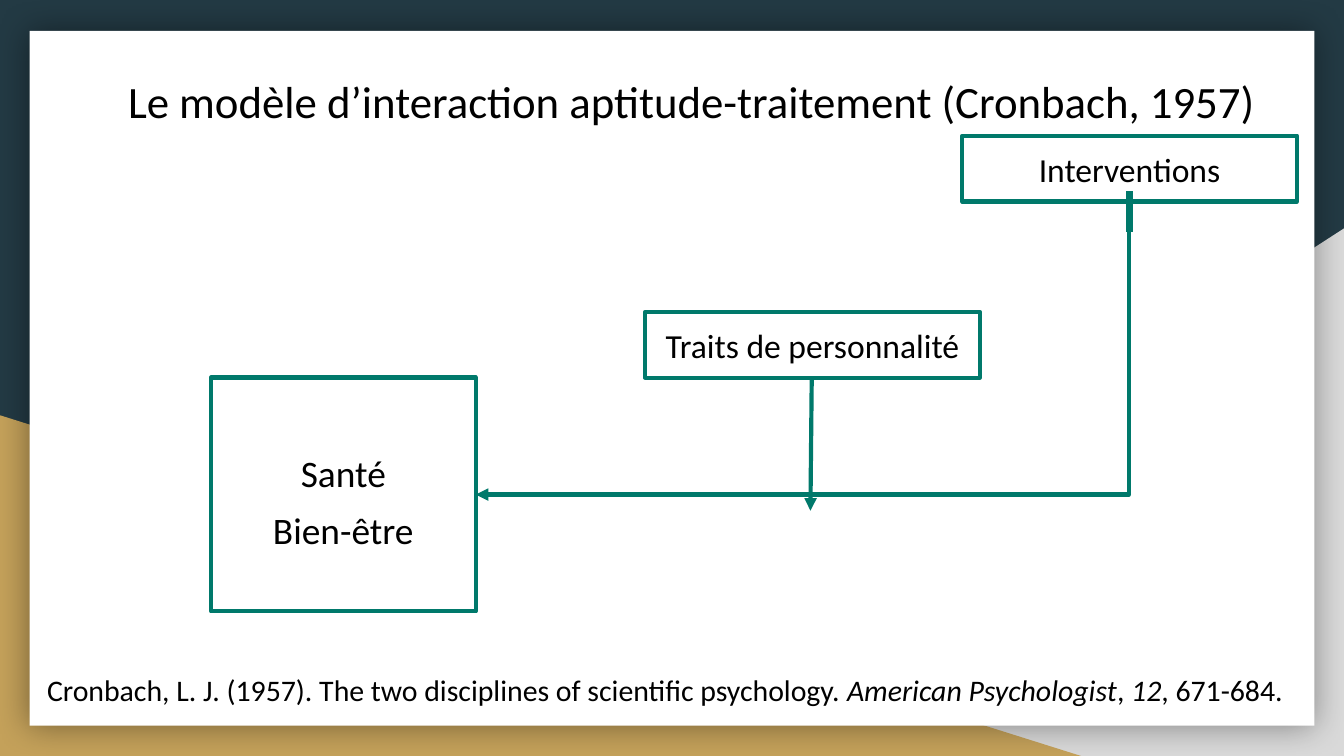
from lxml import etree
from pptx import Presentation, util as u
from pptx.dml.color import RGBColor
from pptx.enum import shapes, text
from pptx.oxml import ns

FONT = "Calibri"
GREEN, WHITE, BLACK = "00796B", "FFFFFF", "000000"


def rgb(value):
    return RGBColor.from_string(value)


def place(shape, box):
    shape.left, shape.top, shape.width, shape.height = map(u.Inches, box)


def add_xml(parent, tag, **attributes):
    return etree.SubElement(parent, ns.qn(tag), attributes)


def highlight(run, colour):
    """Mark a run; the schema wants the mark right after the text fill."""
    properties = run.font._element
    mark = add_xml(properties, "a:highlight")
    add_xml(mark, "a:srgbClr", val=colour)
    properties.find(ns.qn("a:solidFill")).addnext(mark)


def write(shape, paragraphs, size=18, align="CENTER", anchor="TOP", spacing=1):
    """Fill a shape with paragraphs, each a list of (words, italic) runs."""
    frame = shape.text_frame
    frame.word_wrap = True
    frame.auto_size = text.MSO_AUTO_SIZE.NONE
    frame.vertical_anchor = text.MSO_ANCHOR[anchor]
    frame.margin_left = frame.margin_right = u.Inches(0.1)
    frame.margin_top = frame.margin_bottom = u.Inches(0.1)
    for index, runs in enumerate(paragraphs):
        paragraph = frame.add_paragraph() if index else frame.paragraphs[0]
        paragraph.alignment = text.PP_ALIGN[align]
        paragraph.line_spacing = spacing
        paragraph.space_before = u.Pt(0)
        for words, italic in runs:
            run = paragraph.add_run()
            run.text = words
            run.font.name, run.font.size = FONT, u.Pt(size)
            run.font.italic = italic
            run.font.color.rgb = rgb(BLACK)


class ModelSlide:
    line_width = u.Pt(2.25)

    def __init__(self, deck, background):
        self.slide = deck.slides.add_slide(deck.slide_layouts.get_by_name("Two Content"))
        self.shapes = self.slide.shapes
        fill = self.slide.background.fill
        fill.solid()
        fill.fore_color.rgb = rgb(background)

    def panel(self, kind, box, fill, flip=False):
        panel = self.shapes.add_shape(shapes.MSO_SHAPE[kind], *map(u.Inches, box))
        panel.shadow.inherit = False
        panel.fill.solid()
        panel.fill.fore_color.rgb = rgb(fill)
        panel.line.fill.background()
        if flip:
            panel._element.spPr.xfrm.set("flipH", "1")
        return panel

    def card(self, box):
        """White sheet with a soft glow of shadow around it."""
        sheet = self.panel("RECTANGLE", box, WHITE)
        effects = sheet._element.spPr.find(ns.qn("a:effectLst"))
        shadow = add_xml(effects, "a:outerShdw", blurRad=str(u.Pt(18)), dist="0",
                         dir="0", algn="ctr", rotWithShape="0")
        colour = add_xml(shadow, "a:srgbClr", val=BLACK)
        add_xml(colour, "a:alpha", val="40000")

    def placeholder(self, index, box, paragraphs, **style):
        holder = self.slide.placeholders[index]
        place(holder, box)
        self.shapes._spTree.append(holder._element)  # above the panels
        write(holder, paragraphs, **style)
        for paragraph in holder.text_frame.paragraphs:
            properties = paragraph._p.get_or_add_pPr()
            properties.set("marL", "0")
            properties.set("indent", "0")
            add_xml(properties, "a:buNone")
        return holder

    def outline(self, shape):
        shape.line.color.rgb = rgb(GREEN)
        shape.line.width = self.line_width

    def concept(self, box, paragraphs, **style):
        concept = self.panel("RECTANGLE", box, WHITE)
        self.outline(concept)
        write(concept, paragraphs, **style)

    def arrow(self, start, end):
        arrow = self.shapes.add_connector(
            shapes.MSO_CONNECTOR.STRAIGHT, *map(u.Inches, start + end))
        self.outline(arrow)
        add_xml(arrow.line._get_or_add_ln(), "a:tailEnd", type="triangle")
        add_xml(arrow._element.spPr, "a:effectLst")
        return arrow

    def corner_arrow(self, start, end):
        """Arrow that runs down from start, then left to end."""
        run, drop = start[0] - end[0], end[1] - start[1]
        middle_x, middle_y = (start[0] + end[0]) / 2, (start[1] + end[1]) / 2
        # The frame is the unrotated one: a quarter turn swaps its sides.
        left, top = middle_x - drop / 2, middle_y - run / 2
        arrow = self.arrow((left, top), (left + drop, top + run))
        properties = arrow._element.spPr
        properties.xfrm.set("rot", "5400000")
        properties.find(ns.qn("a:prstGeom")).set("prst", "bentConnector2")


def main():
    deck = Presentation()
    deck.slide_width = u.Inches(10)
    deck.slide_height = deck.slide_width * 9 // 16
    model = ModelSlide(deck, "233A44")

    model.panel("RIGHT_TRIANGLE", (3.92, 1.7, 6.08, 3.93), "D9D9D9", flip=True)
    model.panel("RIGHT_TRIANGLE", (0, 3.09, 8.06, 2.54), "C4A15A")
    model.card((0.22, 0.23, 9.56, 5.17))

    model.placeholder(
        0, (0.65, 0.33, 8.99, 0.77),
        [[("Le modèle d’interaction aptitude-traitement (Cronbach, 1957)", False)]],
        size=24, spacing=1.29)
    interventions = model.placeholder(
        1, (7.16, 1.01, 2.49, 0.49), [[("Interventions", False)], [(" ", False)]])
    interventions.fill.solid()
    interventions.fill.fore_color.rgb = rgb(WHITE)
    model.outline(interventions)
    stem = interventions.text_frame.paragraphs[1].runs[0]
    stem.font.color.rgb = rgb(WHITE)
    highlight(stem, GREEN)

    citation = model.placeholder(
        2, (0.25, 4.86, 9.51, 0.49),
        [[("Cronbach, L. J. (1957). The two disciplines of scientific psychology. ", False),
          ("American Psychologist", True), (", ", False),
          ("12", True), (", 671-684.", False)]],
        size=16, align="LEFT", spacing=1.15)
    for part in citation.text_frame.paragraphs[0].runs:
        highlight(part, WHITE)

    model.concept((1.57, 2.81, 1.97, 1.74),
                  [[("Santé", False)], [("Bien-être", False)]],
                  size=20, anchor="MIDDLE", spacing=1.29)
    model.concept((4.8, 2.32, 2.49, 0.49), [[("Traits de personnalité", False)]])

    model.arrow((6.04, 2.81), (6.03, 3.8))
    model.corner_arrow((8.4, 1.5), (3.54, 3.68))

    deck.save("out.pptx")


if __name__ == "__main__":
    main()
